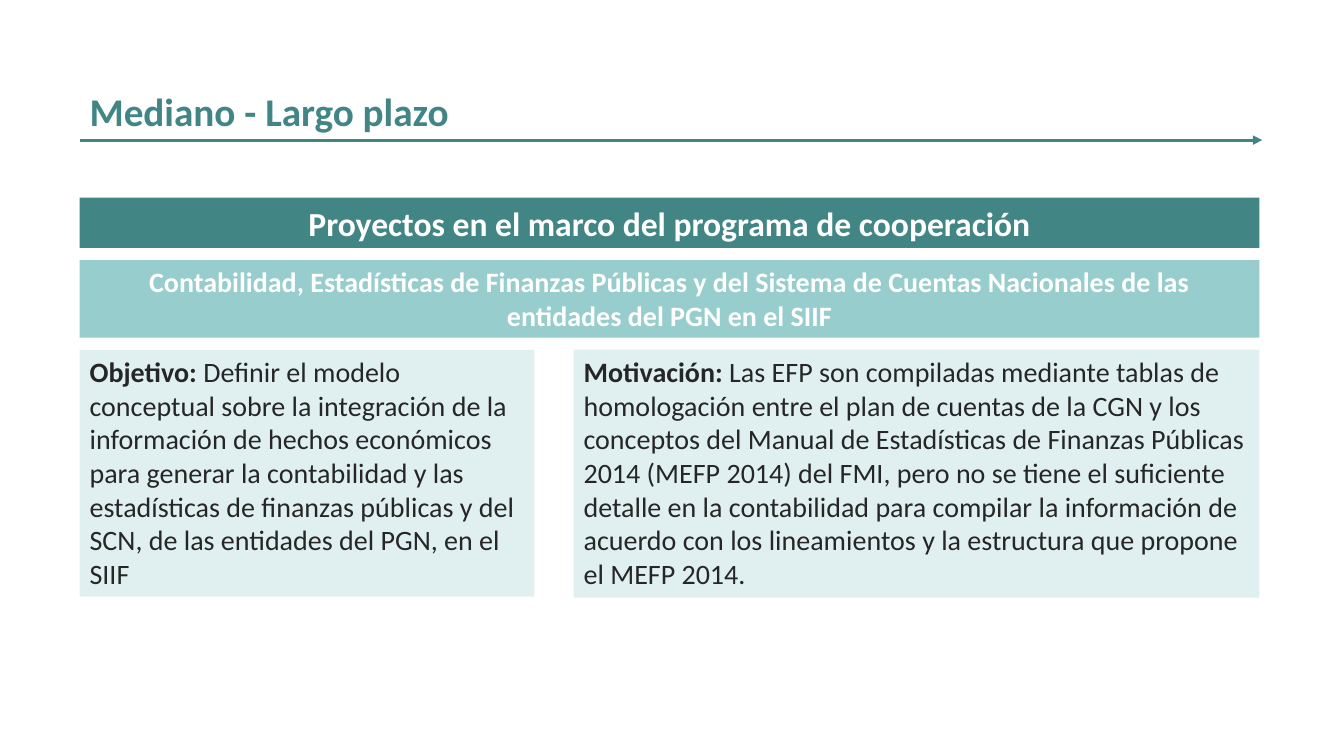
from dataclasses import dataclass
from typing import Optional

from lxml.etree import SubElement
from pptx import Presentation
from pptx.dml.color import RGBColor
from pptx.enum.shapes import MSO_CONNECTOR, MSO_SHAPE
from pptx.enum.text import MSO_ANCHOR, PP_ALIGN
from pptx.oxml.ns import qn
from pptx.slide import Slide
from pptx.text.text import TextFrame
from pptx.util import Inches, Pt

TEAL = RGBColor(0x41, 0x85, 0x84)
LIGHT_TEAL = RGBColor(0x97, 0xCD, 0xCC)
PALE_TEAL = RGBColor(0xE0, 0xF0, 0xF0)
WHITE = RGBColor(0xFF, 0xFF, 0xFF)
DARK_GRAY = RGBColor(0x26, 0x26, 0x26)

FONT = "Calibri"
LEFT = 0.79
WIDTH = 11.7
RULE_TOP = 1.39
RULE_END = 12.52
PANEL_TOP = 3.47


@dataclass
class Panel:
    left: float
    top: float
    width: float
    height: float
    fill: RGBColor
    bold_text: str
    plain_text: str = ""
    size: int = 20
    color: RGBColor = DARK_GRAY
    alignment: PP_ALIGN = PP_ALIGN.LEFT


PANELS = [
    Panel(LEFT, 1.96, WIDTH, 0.5, TEAL,
          "Proyectos en el marco del programa de cooperación",
          size=24, color=WHITE, alignment=PP_ALIGN.CENTER),
    Panel(LEFT, 2.58, WIDTH, 0.77, LIGHT_TEAL,
          "Contabilidad, Estadísticas de Finanzas Públicas y del Sistema de "
          "Cuentas Nacionales de las entidades del PGN en el SIIF",
          color=WHITE, alignment=PP_ALIGN.CENTER),
    Panel(LEFT, PANEL_TOP, 4.51, 2.45, PALE_TEAL, "Objetivo:",
          " Definir el modelo conceptual sobre la integración de la "
          "información de hechos económicos para generar la contabilidad y "
          "las estadísticas de finanzas públicas y del SCN, de las entidades "
          "del PGN, en el SIIF"),
    Panel(5.69, PANEL_TOP, 6.8, 2.46, PALE_TEAL, "Motivación:",
          " Las EFP son compiladas mediante tablas de homologación entre el "
          "plan de cuentas de la CGN y los conceptos del Manual de "
          "Estadísticas de Finanzas Públicas 2014 (MEFP 2014) del FMI, pero "
          "no se tiene el suficiente detalle en la contabilidad para compilar "
          "la información de acuerdo con los lineamientos y la estructura que "
          "propone el MEFP 2014."),
]


def write_text(text_frame: TextFrame, bold_text: str, *, plain_text: str = "",
               size: int, color: RGBColor,
               alignment: Optional[PP_ALIGN] = PP_ALIGN.LEFT) -> None:
    """Write a bold opening, followed by plain text if there is any."""
    text_frame.word_wrap = True
    text_frame.vertical_anchor = MSO_ANCHOR.TOP
    paragraph = text_frame.paragraphs[0]
    paragraph.alignment = alignment
    for text, bold in ((bold_text, True), (plain_text, False)):
        if text:
            run = paragraph.add_run()
            run.text = text
            run.font.name = FONT
            run.font.size = Pt(size)
            run.font.bold = bold
            run.font.color.rgb = color


def add_panel(slide: Slide, panel: Panel) -> None:
    shape = slide.shapes.add_shape(
        MSO_SHAPE.RECTANGLE, Inches(panel.left), Inches(panel.top),
        Inches(panel.width), Inches(panel.height))
    shape.shadow.inherit = False
    shape.fill.solid()
    shape.fill.fore_color.rgb = panel.fill
    shape.line.fill.background()
    write_text(shape.text_frame, panel.bold_text, plain_text=panel.plain_text,
               size=panel.size, color=panel.color, alignment=panel.alignment)


def add_title(slide: Slide, title: str) -> None:
    text_box = slide.shapes.add_textbox(
        Inches(LEFT), Inches(0.82), Inches(WIDTH), Inches(0.57))
    write_text(text_box.text_frame, title, size=28, color=TEAL)


def add_title_arrow(slide: Slide) -> None:
    connector = slide.shapes.add_connector(
        MSO_CONNECTOR.STRAIGHT, Inches(LEFT), Inches(RULE_TOP),
        Inches(RULE_END), Inches(RULE_TOP))
    connector.line.color.rgb = TEAL
    connector.line.width = Pt(2.25)
    SubElement(connector.line._get_or_add_ln(), qn("a:tailEnd"), type="triangle")
    SubElement(connector._element.spPr, qn("a:effectLst"))


def main() -> None:
    presentation = Presentation()
    presentation.slide_width = Inches(13.33)
    presentation.slide_height = Inches(7.5)
    slide = presentation.slides.add_slide(presentation.slide_layouts[6])

    # Banners and text panels
    for panel in PANELS:
        add_panel(slide, panel)

    # Title with its arrow
    add_title(slide, "Mediano - Largo plazo")
    add_title_arrow(slide)

    presentation.save("out.pptx")


if __name__ == "__main__":
    main()
